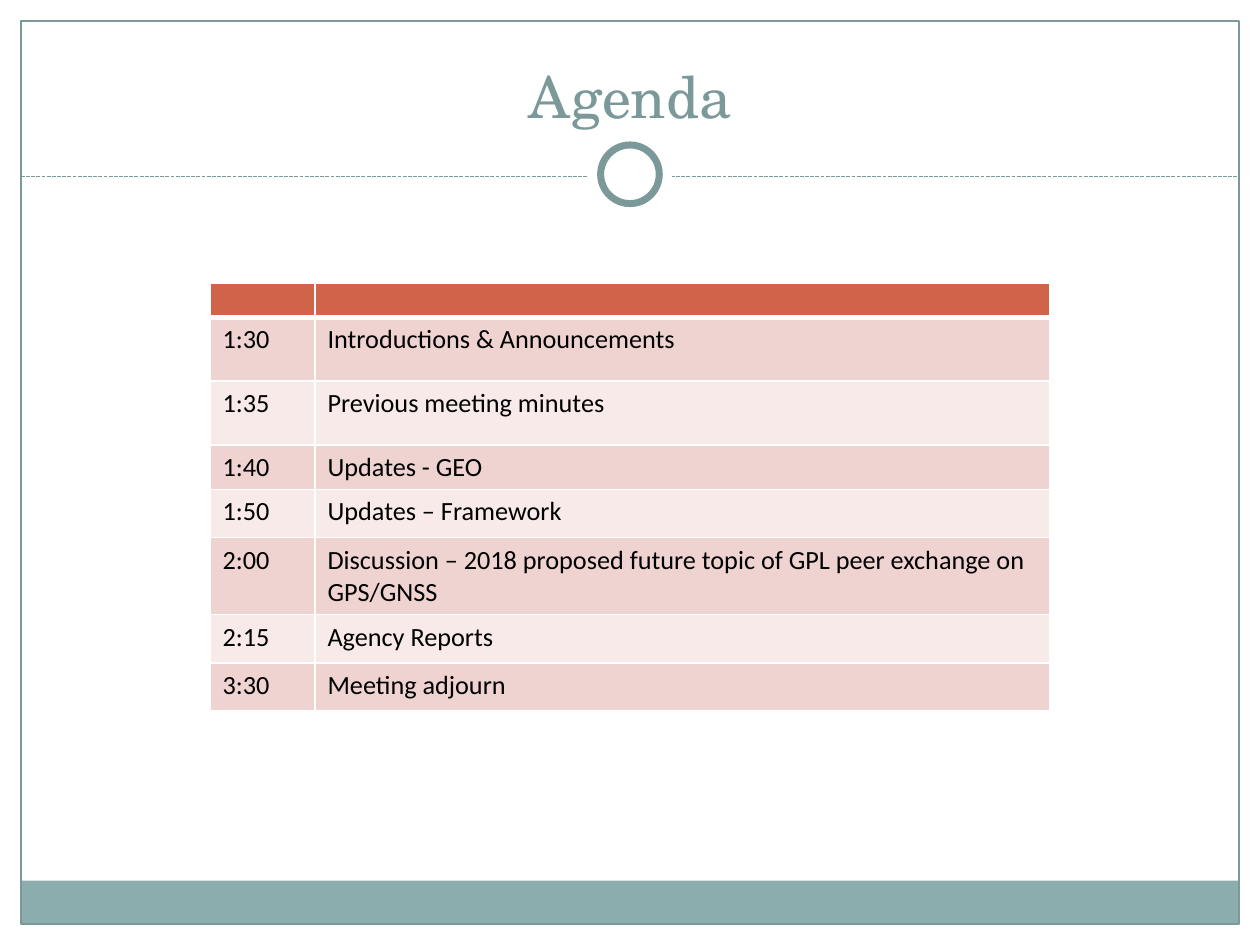
from dataclasses import dataclass

import lxml.etree
import pptx
import pptx.dml.color
import pptx.enum.dml
import pptx.enum.shapes
import pptx.enum.text
import pptx.oxml.ns
import pptx.util

Pt = pptx.util.Pt
Shape = pptx.enum.shapes.MSO_SHAPE
qn = pptx.oxml.ns.qn

WHITE, TEAL, PALE_TEAL = "FFFFFF", "7C999A", "8CADAE"
HEADER_FILL = "D16349"
BAND_FILLS = ("EED3D0", "F7EAE9")
WIDTH, HEIGHT = 720, 540
MARGIN = 12
RULE_Y = 100.8


@dataclass
class Panel:
    left: float
    top: float
    width: float
    height: float
    fill: str | None = WHITE
    line: str | None = None
    weight: float = 0.75
    kind: Shape = Shape.RECTANGLE


@dataclass
class AgendaItem:
    time: str
    topic: str
    height: float


def ring(diameter: float, **style) -> Panel:
    """Circle centred on the page, just above the dashed rule."""
    return Panel((WIDTH - diameter) / 2, RULE_Y - 1.2 - diameter / 2,
                 diameter, diameter, kind=Shape.OVAL, **style)


FRAME = [
    Panel(0, 0, WIDTH, 109.5),
    Panel(0, 0, MARGIN, HEIGHT),
    Panel(WIDTH - MARGIN, 0, MARGIN, HEIGHT),
    Panel(MARGIN, 503.2, WIDTH - 2 * MARGIN, 24.5, PALE_TEAL),
    Panel(MARGIN, MARGIN, WIDTH - 2 * MARGIN, HEIGHT - 2 * MARGIN, None, TEAL),
]
RINGS = [ring(48), ring(33.5, line=TEAL, weight=4)]

AGENDA = [
    AgendaItem("1:30", "Introductions & Announcements", 36.4),
    AgendaItem("1:35", "Previous meeting minutes", 36.4),
    AgendaItem("1:40", "Updates - GEO", 25.5),
    AgendaItem("1:50", "Updates – Framework", 27.5),
    AgendaItem("2:00", "Discussion – 2018 proposed future topic of GPL peer "
                       "exchange on GPS/GNSS", 44),
    AgendaItem("2:15", "Agency Reports", 27.5),
    AgendaItem("3:30", "Meeting adjourn", 27.5),
]
HEADER = AgendaItem("", "", 19.4)
COLUMN_WIDTHS = (60, 420)


def color(value: str) -> pptx.dml.color.RGBColor:
    return pptx.dml.color.RGBColor.from_string(value)


def add_panel(page, panel: Panel) -> None:
    shape = page.shapes.add_shape(panel.kind, Pt(panel.left), Pt(panel.top),
                                  Pt(panel.width), Pt(panel.height))
    shape.shadow.inherit = False
    if panel.fill:
        shape.fill.solid()
        shape.fill.fore_color.rgb = color(panel.fill)
    else:
        shape.fill.background()
    if panel.line:
        shape.line.color.rgb = color(panel.line)
        shape.line.width = Pt(panel.weight)
    else:
        shape.line.fill.background()


def add_dashed_rule(page) -> None:
    rule = page.shapes.add_connector(
        pptx.enum.shapes.MSO_CONNECTOR.STRAIGHT,
        Pt(MARGIN), Pt(RULE_Y), Pt(WIDTH - MARGIN), Pt(RULE_Y))
    rule.line.color.rgb = color(TEAL)
    rule.line.width = Pt(0.75)
    rule.line.dash_style = pptx.enum.dml.MSO_LINE.SQUARE_DOT
    properties = rule.element.find(qn("p:spPr"))
    lxml.etree.SubElement(properties, qn("a:effectLst"))


def set_borders(cell, top: float, bottom: float) -> None:
    """White borders; the side ones are one point wide."""
    properties = cell._tc.get_or_add_tcPr()
    weights = {"a:lnL": 1, "a:lnR": 1, "a:lnT": top, "a:lnB": bottom}
    for index, (tag, weight) in enumerate(weights.items()):
        border = lxml.etree.Element(qn(tag), w=str(int(Pt(weight))))
        fill = lxml.etree.SubElement(border, qn("a:solidFill"))
        lxml.etree.SubElement(fill, qn("a:srgbClr"), val=WHITE)
        properties.insert(index, border)


def format_cell(cell, text: str, row: int) -> None:
    is_header = row == 0
    cell.fill.solid()
    cell.fill.fore_color.rgb = color(
        HEADER_FILL if is_header else BAND_FILLS[(row - 1) % 2])
    set_borders(cell, top=3 if row == 1 else 1, bottom=3 if is_header else 1)
    cell.text = text
    para = cell.text_frame.paragraphs[0]
    size = 10 if is_header else 15
    para.font.name = "Calibri"
    para.font.size = Pt(size)
    para.font.bold = False
    para.font.color.rgb = color("000000")
    if not text:
        # An empty paragraph takes its height from its end mark.
        lxml.etree.SubElement(para._p, qn("a:endParaRPr"), sz=str(size * 100))


def add_agenda(page) -> None:
    items = [HEADER, *AGENDA]
    table = page.shapes.add_table(
        len(items), len(COLUMN_WIDTHS), Pt(120), Pt(162),
        Pt(sum(COLUMN_WIDTHS)), Pt(sum(item.height for item in items))).table
    for column, width in zip(table.columns, COLUMN_WIDTHS):
        column.width = Pt(width)
    for row, item in enumerate(items):
        table.rows[row].height = Pt(item.height)
        for column, text in enumerate((item.time, item.topic)):
            format_cell(table.cell(row, column), text, row)


def set_title(page, text: str) -> None:
    title = page.shapes.title
    title.left, title.top = Pt(24), Pt(18)
    title.width, title.height = Pt(672), Pt(60)
    frame = title.text_frame
    frame.text = text
    frame.word_wrap = True
    frame.auto_size = pptx.enum.text.MSO_AUTO_SIZE.NONE
    frame.vertical_anchor = pptx.enum.text.MSO_ANCHOR.BOTTOM
    para = frame.paragraphs[0]
    para.alignment = pptx.enum.text.PP_ALIGN.CENTER
    para.font.name = "TeX Gyre Schola"
    para.font.size = Pt(33)
    para.font.color.rgb = color(TEAL)
    # Bring the title in front of the white header panel.
    page.shapes.element.append(title.element)


def main() -> None:
    deck = pptx.Presentation()
    deck.slide_width, deck.slide_height = Pt(WIDTH), Pt(HEIGHT)
    page = deck.slides.add_slide(deck.slide_layouts[5])
    for panel in FRAME:
        add_panel(page, panel)
    add_dashed_rule(page)
    for panel in RINGS:
        add_panel(page, panel)
    set_title(page, "Agenda")
    add_agenda(page)
    deck.save("out.pptx")


if __name__ == "__main__":
    main()
